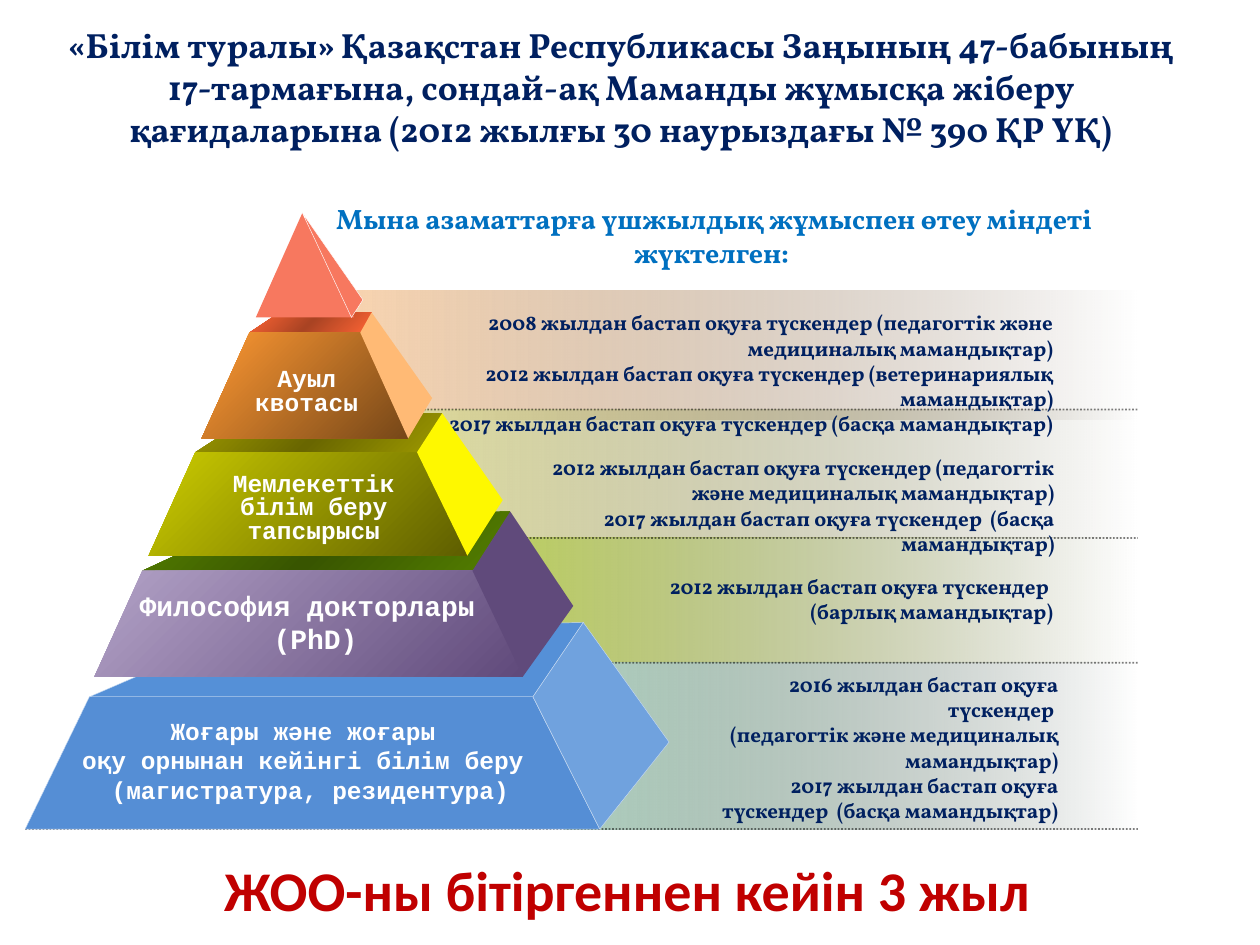
from pptx import Presentation, util as u
from pptx.dml.color import RGBColor
from pptx.enum import dml, shapes, text
from pptx.oxml import ns, xmlchemy

PX = 9144  # EMU per px, 100 px to the inch

NAVY = RGBColor(0x00, 0x20, 0x60)
AZURE = RGBColor(0x00, 0x70, 0xC0)
RED = RGBColor(0xC0, 0x00, 0x00)
WHITE = RGBColor(0xFF, 0xFF, 0xFF)
BLACK = RGBColor(0x00, 0x00, 0x00)
PEACH, PEACH_END = RGBColor(0xFF, 0xD8, 0xB1), RGBColor(0x76, 0x64, 0x52)
SAND, SAND_END = RGBColor(0xE2, 0xE0, 0xA0), RGBColor(0x69, 0x68, 0x4A)
LIME, LIME_END = RGBColor(0xBE, 0xD2, 0x5A), RGBColor(0x58, 0x61, 0x2A)
MINT, MINT_END = RGBColor(0xAC, 0xCE, 0xBD), RGBColor(0x50, 0x5F, 0x57)
CORAL = RGBColor(0xF7, 0x78, 0x5F)
EMBER, EMBER_DARK = RGBColor(0xFF, 0x65, 0x35), RGBColor(0xA9, 0x43, 0x23)
ORANGE, BROWN = RGBColor(0xFF, 0x99, 0x33), RGBColor(0x76, 0x47, 0x18)
APRICOT = RGBColor(0xFF, 0xBA, 0x75)
OLIVE, OLIVE_DARK = RGBColor(0x9E, 0x9A, 0x00), RGBColor(0x69, 0x66, 0x00)
MUSTARD, MOSS = RGBColor(0xCC, 0xCC, 0x00), RGBColor(0x5E, 0x5E, 0x00)
YELLOW = RGBColor(0xFE, 0xF8, 0x00)
GREEN, GREEN_DARK = RGBColor(0x55, 0x80, 0x00), RGBColor(0x38, 0x55, 0x00)
LILAC, PURPLE = RGBColor(0xB3, 0xA2, 0xC7), RGBColor(0x60, 0x4A, 0x7B)
BLUE_TOP, BLUE = RGBColor(0x55, 0x90, 0xD7), RGBColor(0x55, 0x8E, 0xD5)
BLUE_SIDE, BLUE_EDGE = RGBColor(0x70, 0xA2, 0xDE), RGBColor(0xC6, 0xD9, 0xF1)

RIGHT_EDGE = 903
# box, start and end colour, left end of the rule, note box within the band, note
BANDS = [
    ((248, 231, 655, 102), (PEACH, PEACH_END), 284, (40, 10, 558, 111),
     "2008 жылдан бастап оқуға түскендер (педагогтік және медициналық мамандықтар)\n"
     "2012 жылдан бастап оқуға түскендер (ветеринариялық мамандықтар)\n"
     "2017 жылдан бастап оқуға түскендер (басқа мамандықтар)"),
    ((304, 325, 599, 102), (SAND, SAND_END), 368, (86, 31, 457, 91),
     "2012 жылдан бастап оқуға түскендер (педагогтік және медициналық мамандықтар)\n"
     "2017 жылдан бастап оқуға түскендер  (басқа мамандықтар)"),
    ((368, 427, 535, 99), (LIME, LIME_END), 433, (81, 23, 397, 50),
     "2012 жылдан бастап оқуға түскендер \n(барлық мамандықтар)"),
    ((449, 526, 454, 132), (MINT, MINT_END), 20, (82, 2, 319, 131),
     "2016 жылдан бастап оқуға түскендер \n"
     "(педагогтік және медициналық мамандықтар)\n"
     "2017 жылдан бастап оқуға түскендер  (басқа мамандықтар)"),
]


def add(parent, tag, **attributes):
    child = xmlchemy.OxmlElement(tag)
    for key, value in attributes.items():
        child.set(key, str(value))
    parent.append(child)
    return child


def write(frame, content, size, color, font="Vollkorn", align=text.PP_ALIGN.CENTER,
          anchor=text.MSO_ANCHOR.TOP, wrap=True, spacing=None, shadow=False):
    frame.auto_size = text.MSO_AUTO_SIZE.NONE
    frame.word_wrap = wrap
    frame.vertical_anchor = anchor
    frame.text = content
    for line in frame.paragraphs:
        line.alignment = align
        line.line_spacing = spacing
        for run in line.runs:
            run.font.size = u.Pt(size)
            run.font.bold = True
            run.font.color.rgb = color
            if shadow:
                effects = add(run.font._element, "a:effectLst")
                cast = add(effects, "a:outerShdw", dist=25400, dir=2700000)
                add(cast, "a:srgbClr", val="808080")
            run.font.name = font


def text_box(slide, box, content, **style):
    frame = slide.shapes.add_textbox(*(n * PX for n in box)).text_frame
    write(frame, content, **style)


def paint(shape, colors, angle=0, fade=False, edge=None):
    """Fill with one colour or with an even gradient; fade makes the last stop clear."""
    shape.shadow.inherit = False
    if len(colors) == 1:
        shape.fill.solid()
        shape.fill.fore_color.rgb = colors[0]
    else:
        shape.fill.gradient()
        shape.fill.gradient_angle = angle
        stops = shape._element.spPr.find(".//" + ns.qn("a:gsLst"))
        for stop in list(stops):
            stops.remove(stop)
        for i, color in enumerate(colors):
            stop = add(stops, "a:gs", pos=100000 * i // (len(colors) - 1))
            tint = add(stop, "a:srgbClr", val=color)
        if fade:
            add(tint, "a:alpha", val=0)
    if edge is None:
        shape.line.fill.background()
    else:
        shape.line.color.rgb = edge
        shape.line.width = u.Pt(0.25)


def face(slide, origin, points, colors, edge=None):
    start, *others = [(origin[0] + x, origin[1] + y) for x, y in points]
    outline = slide.shapes.build_freeform(*start, scale=PX)
    outline.add_line_segments(others, close=True)
    paint(outline.convert_to_shape(), colors, angle=315, edge=edge)


def band(slide, box, colors):
    strip = slide.shapes.add_shape(shapes.MSO_SHAPE.RECTANGLE, *(n * PX for n in box))
    paint(strip, colors, fade=True)


def rule(slide, left, y):
    dots = slide.shapes.add_connector(shapes.MSO_CONNECTOR.STRAIGHT,
                                      left * PX, y * PX, RIGHT_EDGE * PX, y * PX)
    dots.line.color.rgb = BLACK
    dots.line.width = u.Pt(1)
    dots.line.dash_style = dml.MSO_LINE.ROUND_DOT
    add(dots._element.spPr.find(".//" + ns.qn("a:srgbClr")), "a:alpha", val=50000)
    add(dots._element.spPr, "a:effectLst")


def bands(slide):
    for box, colors, *_ in BANDS:
        band(slide, box, colors)
    for (left, top, width, height), _, rule_left, (x, y, w, h), note in BANDS:
        # the first strip runs on below its rule, under the second one
        bottom = min(top + height, 325) if top < 325 else top + height
        rule(slide, rule_left, bottom)
        text_box(slide, (left + x, top + y, w, h), note, size=12, color=NAVY,
                 align=text.PP_ALIGN.RIGHT)


def tier(slide, box, roof, back, tip, colors, label_box, label, edge=None, **style):
    """Top, front and side of one pyramid tier; points are relative to the front's box."""
    left, top, width, height = box
    roof_left, roof_right = (roof[0], 0), (roof[1], 0)
    top_colors, front_colors, side_colors = colors
    face(slide, (left, top), [roof_left, roof_right, back[1], back[0]], top_colors, edge)
    face(slide, (left, top), [(0, height), (width, height), roof_right, roof_left],
         front_colors, edge)
    face(slide, (left, top), [(width, height), tip, back[1], roof_right], side_colors, edge)
    x, y, w, h = label_box
    text_box(slide, (left + x, top + y, w, h), label, color=WHITE, font="Courier New",
             shadow=True, **style)


def peak(slide, left, top):
    apex = (37, 0)
    face(slide, (left, top), [(0, 83), (78, 83), apex], [CORAL])
    face(slide, (left, top), [(76, 83), (85, 69), apex], [CORAL], WHITE)


def pyramid(slide):
    middle = text.MSO_ANCHOR.MIDDLE
    tier(slide, (20, 553, 456, 105), (51, 403), ((174, -53), (443, -59)), (511, 36),
         ([BLUE_TOP], [BLUE], [BLUE_SIDE]), (64, 21, 325, 58),
         "Жоғары және жоғары \nоқу орнынан кейінгі білім беру \n(магистратура, резидентура)",
         edge=BLUE_EDGE, size=14, anchor=middle, wrap=False)
    tier(slide, (75, 453, 340, 84), (38, 300), ((129, -42), (330, -47)), (380, 28),
         ([GREEN, GREEN_DARK, GREEN], [LILAC, PURPLE], [PURPLE]), (52, 25, 247, 31),
         "Философия докторлары \n(PhD)", size=16, anchor=middle, wrap=False)
    tier(slide, (118, 359, 253, 82), (37, 213), ((85, -31), (233, -31)), (281, 38),
         ([OLIVE, OLIVE_DARK, OLIVE], [MUSTARD, MOSS], [YELLOW]), (0, 12, 274, 67),
         "Мемлекеттік \nбілім беру \nтапсырысы ", size=14, spacing=0.8)
    tier(slide, (160, 264, 164, 84), (38, 126), ((62, -16), (135, -16)), (183, 52),
         ([EMBER, EMBER_DARK, EMBER], [ORANGE, BROWN], [APRICOT]), (16, 24, 135, 49),
         "Ауыл квотасы", size=14, spacing=0.8)
    peak(slide, 203, 169)


def heading(slide, left, top, width, height):
    title = slide.shapes.title
    title.left, title.top, title.width, title.height = (
        n * PX for n in (left, top, width, height))
    write(title.text_frame,
          "«Білім туралы» Қазақстан Республикасы Заңының 47-бабының 17-тармағына, "
          "сондай-ақ Маманды жұмысқа жіберу қағидаларына "
          "(2012 жылғы 30 наурыздағы № 390 ҚР ҮҚ)",
          size=20, color=NAVY, anchor=text.MSO_ANCHOR.MIDDLE)


def main():
    deck = Presentation()
    deck.slide_width, deck.slide_height = 1000 * PX, 750 * PX
    slide = deck.slides.add_slide(deck.slide_layouts.get_by_name("Title Only"))
    heading(slide, 43, 13, 900, 111)
    bands(slide)
    pyramid(slide)
    text_box(slide, (241, 155, 652, 64),
             "Мына азаматтарға үшжылдық жұмыспен өтеу міндеті жүктелген: ",
             size=16, color=AZURE)
    text_box(slide, (148, 674, 700, 62), "ЖОО-ны бітіргеннен кейін 3 жыл",
             size=32, color=RED, font="Calibri")
    deck.save("out.pptx")


if __name__ == "__main__":
    main()
